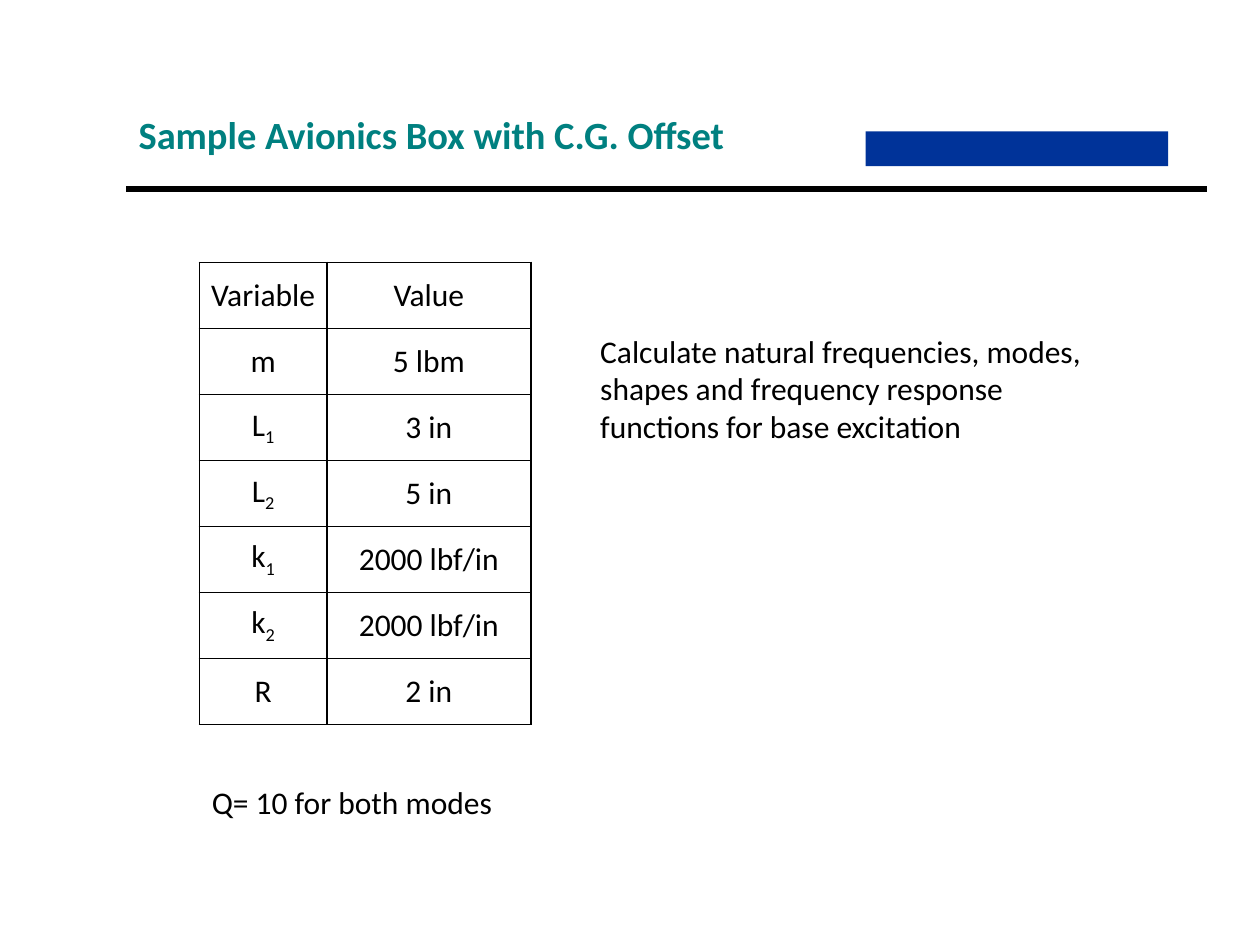
from typing import NamedTuple

from lxml.etree import SubElement
from pptx import Presentation
from pptx.dml.color import RGBColor
from pptx.enum.shapes import MSO_CONNECTOR, MSO_SHAPE
from pptx.enum.text import MSO_ANCHOR, MSO_AUTO_SIZE, PP_ALIGN
from pptx.oxml.ns import qn
from pptx.slide import Slide
from pptx.util import Cm, Pt

TEAL = RGBColor(0x00, 0x80, 0x80)
NAVY = RGBColor(0x00, 0x33, 0x99)
BLACK = RGBColor(0x00, 0x00, 0x00)


class Style(NamedTuple):
    size: int
    color: RGBColor = BLACK
    bold: bool = False
    font: str = "Calibri"


class Note(NamedTuple):
    text: str
    left: float
    top: float
    width: float
    height: float
    style: Style


class Row(NamedTuple):
    name: str
    sub: str
    value: str


PLAIN = Style(18)
TITLE = Note("Sample Avionics Box with C.G. Offset", 2.54, 2.11, 13.54, 1.19,
             Style(22, TEAL, True))
NOTES = [
    Note("Q= 10 for both modes", 4.02, 15.66, 6.55, 1.03, PLAIN),
    Note("Calculate natural frequencies, modes, shapes and frequency response "
         "functions for base excitation", 11.85, 6.56, 10.59, 2.57, PLAIN),
]
ROWS = [
    Row("Variable", "", "Value"),
    Row("m", "", "5 lbm"),
    Row("L", "1", "3 in"),
    Row("L", "2", "5 in"),
    Row("k", "1", "2000 lbf/in"),
    Row("k", "2", "2000 lbf/in"),
    Row("R", "", "2 in"),
]
COLS = [2.57, 4.11]
ROW_H = 1.33


def add_run(para, text: str, style: Style, sub: bool = False) -> None:
    run = para.add_run()
    run.text = text
    font = run.font
    font.name = style.font
    font.size = Pt(style.size)
    font.bold = style.bold
    font.color.rgb = style.color
    if sub:
        font._element.set("baseline", "-25000")


def fill_note(shape, note: Note) -> None:
    shape.left, shape.top = Cm(note.left), Cm(note.top)
    shape.width, shape.height = Cm(note.width), Cm(note.height)
    frame = shape.text_frame
    frame.word_wrap = True
    frame.auto_size = MSO_AUTO_SIZE.NONE
    frame.vertical_anchor = MSO_ANCHOR.TOP
    para = frame.paragraphs[0]
    para.alignment = PP_ALIGN.LEFT
    add_run(para, note.text, note.style)


def add_note(slide: Slide, note: Note) -> None:
    box = slide.shapes.add_textbox(Cm(0), Cm(0), Cm(1), Cm(1))
    fill_note(box, note)


def add_block(slide: Slide) -> None:
    block = slide.shapes.add_shape(
        MSO_SHAPE.RECTANGLE, Cm(17.45), Cm(2.65), Cm(6.1), Cm(0.7))
    block.shadow.inherit = False
    block.fill.solid()
    block.fill.fore_color.rgb = NAVY
    block.line.fill.background()


def add_rule(slide: Slide) -> None:
    rule = slide.shapes.add_connector(
        MSO_CONNECTOR.STRAIGHT, Cm(2.54), Cm(3.81), Cm(24.33), Cm(3.81))
    rule.line.color.rgb = BLACK
    rule.line.width = Pt(3)
    SubElement(rule._element.spPr, qn("a:effectLst"))


def set_cell(cell, text: str, sub: str = "") -> None:
    cell.margin_left = cell.margin_right = Cm(0.18)
    cell.margin_top = cell.margin_bottom = Cm(0)
    cell.vertical_anchor = MSO_ANCHOR.MIDDLE
    para = cell.text_frame.paragraphs[0]
    para.alignment = PP_ALIGN.CENTER
    add_run(para, text, PLAIN)
    if sub:
        add_run(para, sub, PLAIN, True)
    props = cell._tc.get_or_add_tcPr()
    for side in ("lnL", "lnR", "lnT", "lnB"):
        edge = SubElement(props, qn(f"a:{side}"), w=str(Pt(1)))
        paint = SubElement(edge, qn("a:solidFill"))
        SubElement(paint, qn("a:srgbClr"), val=str(BLACK))
    cell.fill.background()


def add_grid(slide: Slide) -> None:
    grid = slide.shapes.add_table(
        len(ROWS), len(COLS), Cm(4.02), Cm(5.29),
        Cm(sum(COLS)), Cm(ROW_H * len(ROWS))).table
    for col, width in zip(grid.columns, COLS):
        col.width = Cm(width)
    for at, row in enumerate(ROWS):
        grid.rows[at].height = Cm(ROW_H)
        set_cell(grid.cell(at, 0), row.name, row.sub)
        set_cell(grid.cell(at, 1), row.value)


def main() -> None:
    deck = Presentation()
    deck.slide_width, deck.slide_height = Cm(25.4), Cm(19.05)
    slide = deck.slides.add_slide(deck.slide_layouts[5])
    fill_note(slide.shapes.title, TITLE)
    add_block(slide)
    add_rule(slide)
    add_grid(slide)
    for note in NOTES:
        add_note(slide, note)
    deck.save("out.pptx")


if __name__ == "__main__":
    main()
